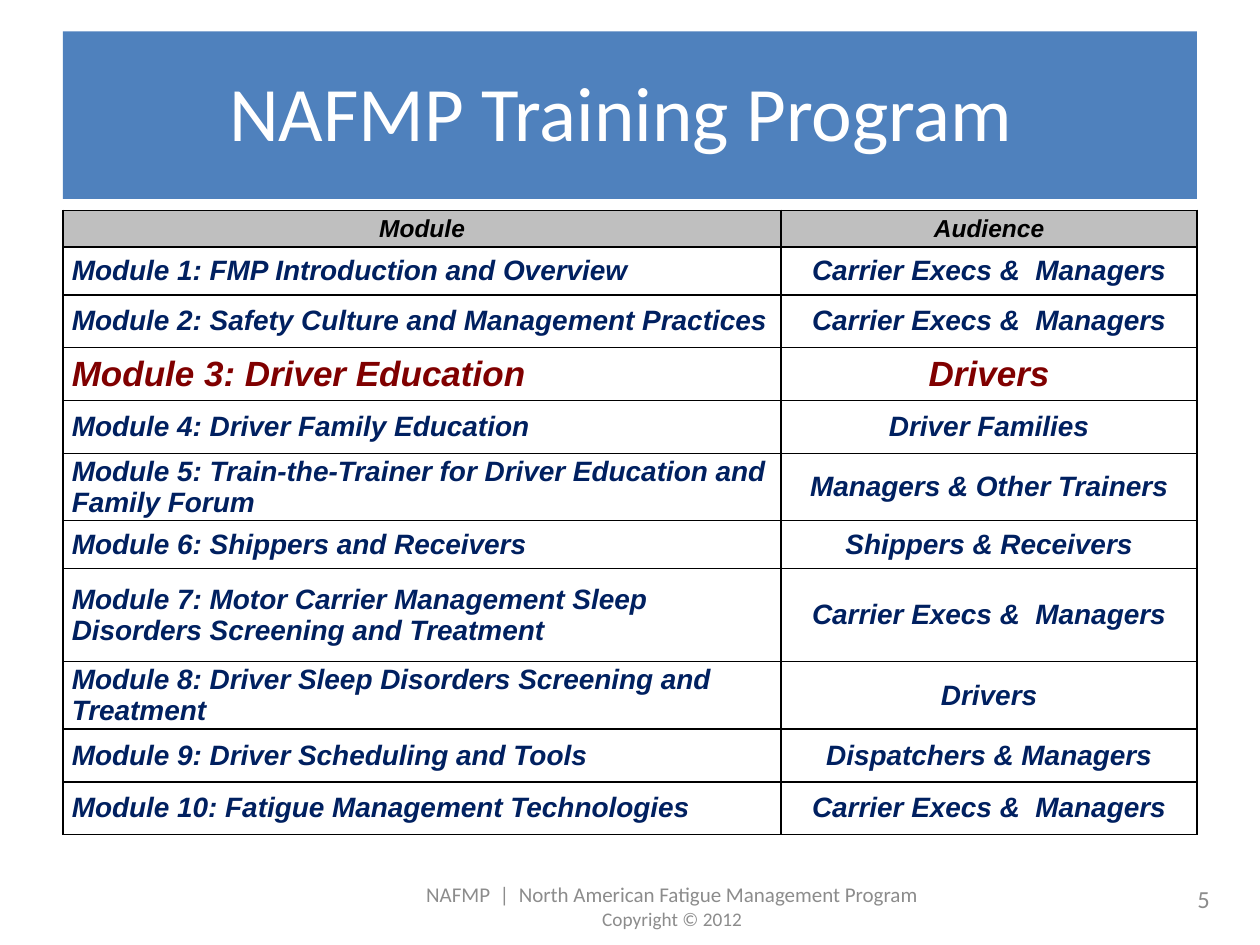
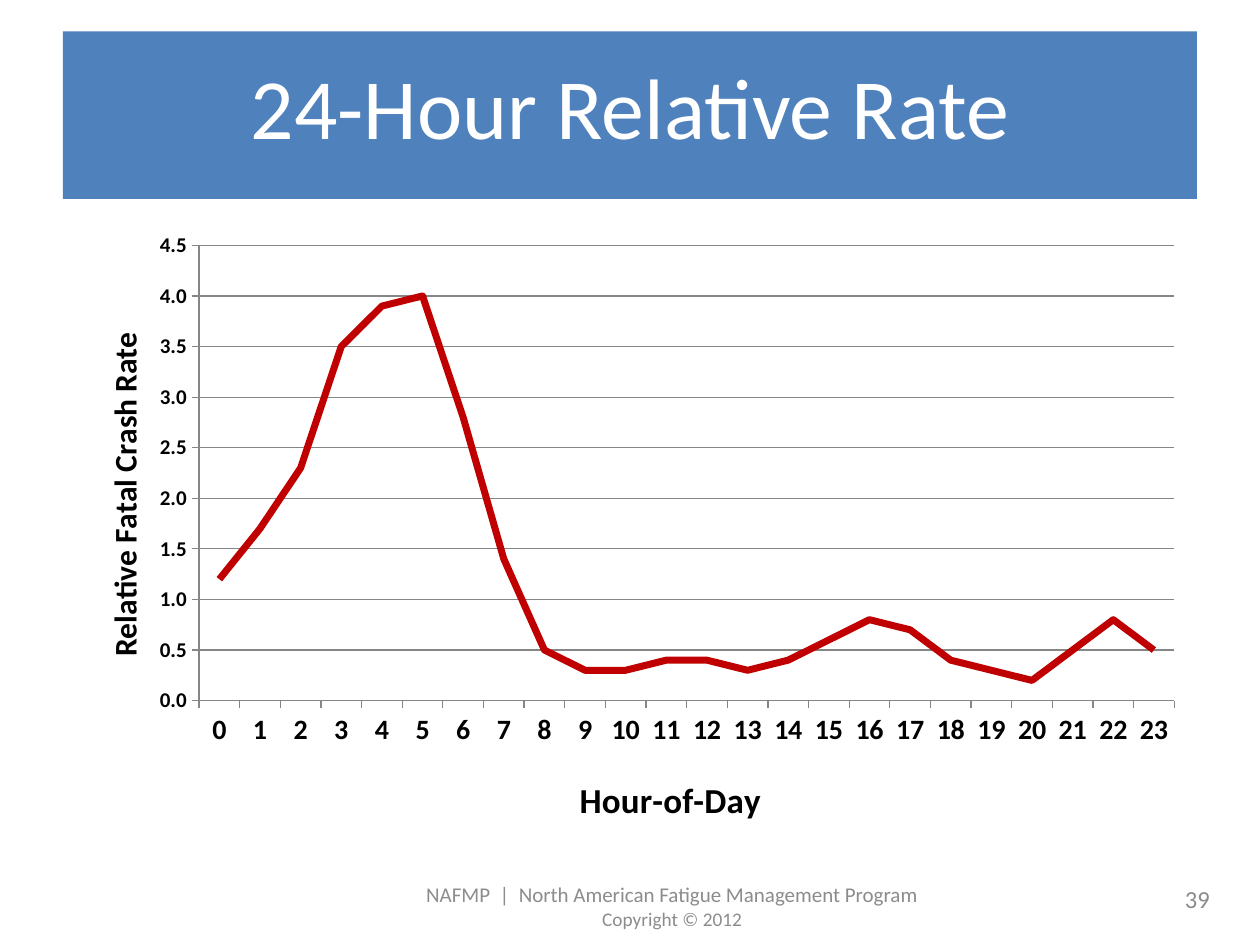
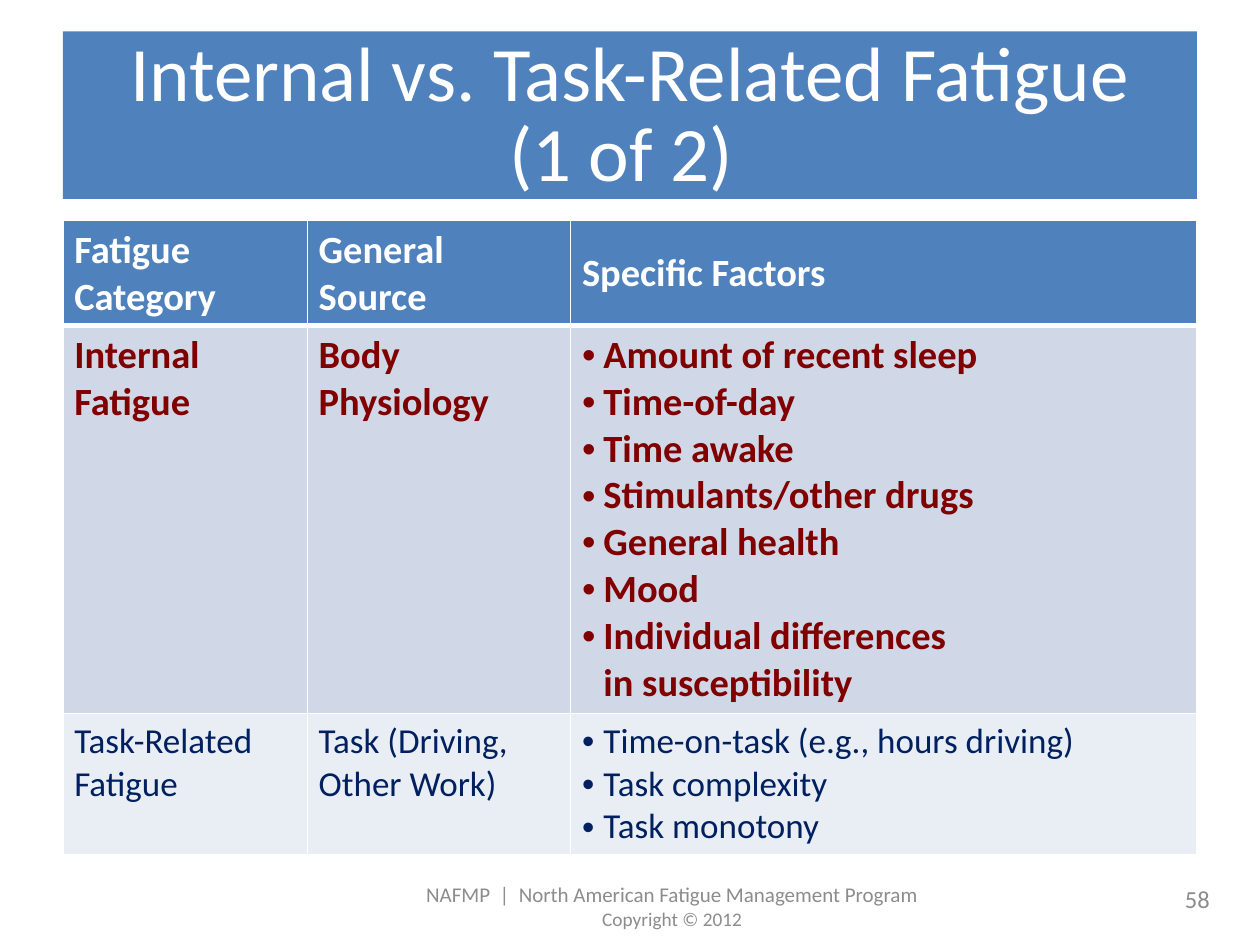
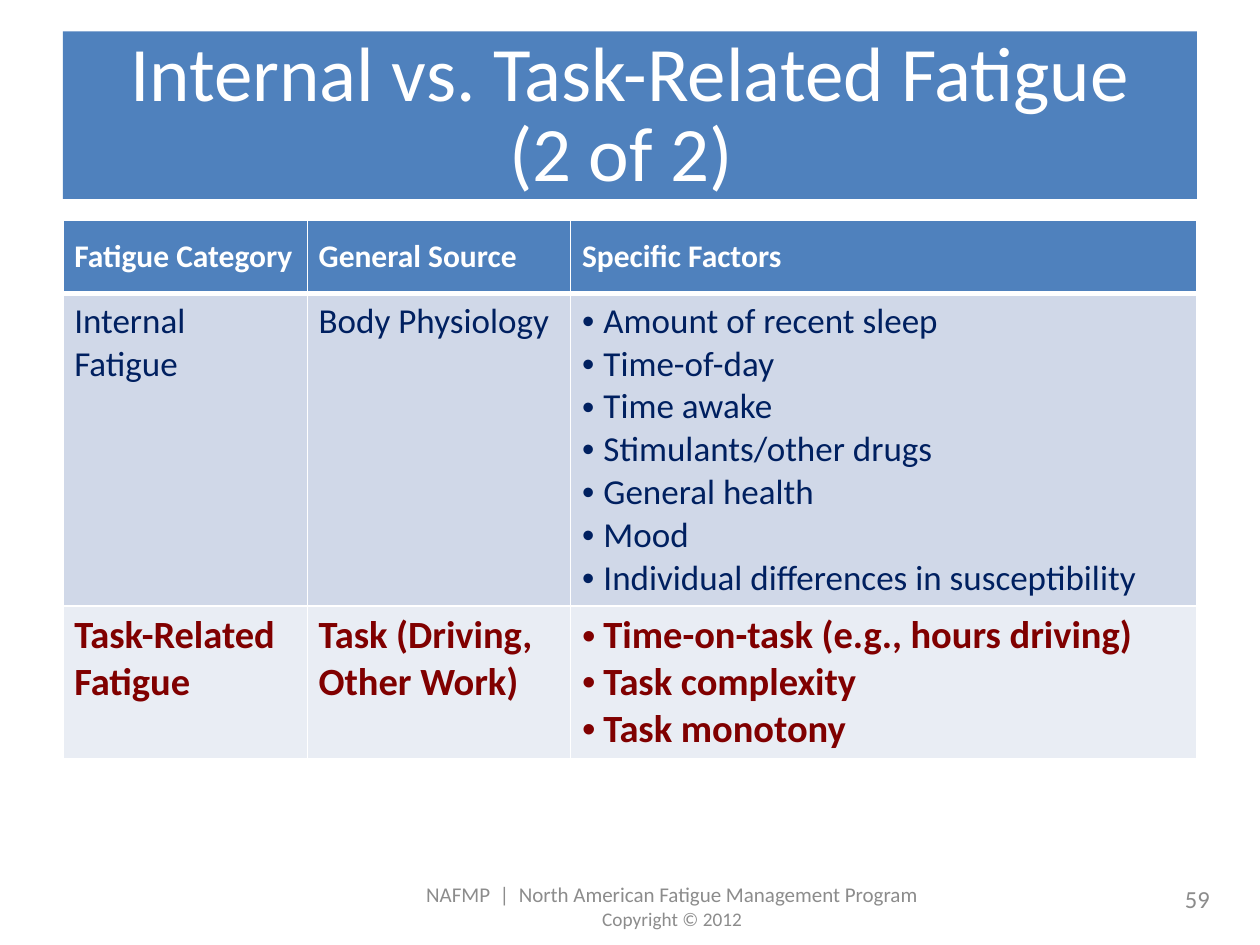
import lxml.etree
import pptx
import pptx.chart.data
import pptx.dml.color
import pptx.enum.chart
import pptx.enum.shapes
import pptx.enum.text
import pptx.oxml
import pptx.oxml.ns
import pptx.util

Inches = pptx.util.Inches
Pt = pptx.util.Pt
qn = pptx.oxml.ns.qn
ALIGN = pptx.enum.text.PP_ALIGN
ANCHOR = pptx.enum.text.MSO_ANCHOR

BLUE, WHITE, BLACK = "4F81BD", "FFFFFF", "000000"
NAVY, MAROON, RED = "002060", "800000", "C00000"
SILVER, GREY, AXIS_GREY = "BFBFBF", "8C8C8C", "868686"
BODY_FILLS = ["D0D8E8", "E9EDF4"]

LEFT, WIDTH = 0.5, 9
FOOTER = [("NAFMP  |  North American Fatigue Management Program", 12),
          ("Copyright © 2012", 11)]

MODULE_COLUMNS = [("Module", 5.7), ("Audience", 3.3)]
MODULE_HEADER_HEIGHT = 0.29
HIGHLIGHTED_MODULE = 3
MODULES = [  # topic, audience, row height
    ("FMP Introduction and Overview", "Carrier Execs &  Managers", 0.38),
    ("Safety Culture and Management Practices", "Carrier Execs &  Managers", 0.42),
    ("Driver Education", "Drivers", 0.42),
    ("Driver Family Education", "Driver Families", 0.42),
    ("Train-the-Trainer for Driver Education and Family Forum",
     "Managers & Other Trainers", 0.5),
    ("Shippers and Receivers", "Shippers & Receivers", 0.38),
    ("Motor Carrier Management Sleep Disorders Screening and Treatment",
     "Carrier Execs &  Managers", 0.74),
    ("Driver Sleep Disorders Screening and Treatment", "Drivers", 0.5),
    ("Driver Scheduling and Tools", "Dispatchers & Managers", 0.42),
    ("Fatigue Management Technologies", "Carrier Execs &  Managers", 0.42),
]

CRASH_RATES = [1.2, 1.7, 2.3, 3.5, 3.9, 4.0, 2.8, 1.4, 0.5, 0.3, 0.3, 0.4,
               0.4, 0.3, 0.4, 0.6, 0.8, 0.7, 0.4, 0.3, 0.2, 0.5, 0.8, 0.5]

FATIGUE_COLUMNS = [("Fatigue Category", 1.94), ("General Source", 2.09),
                   ("Specific Factors", 4.97)]
FATIGUE_TYPES = [  # category, source, factors
    (["Internal", "Fatigue"], ["Body Physiology"],
     ["Amount of recent sleep", "Time-of-day", "Time awake",
      "Stimulants/other drugs", "General health", "Mood",
      "Individual differences\nin susceptibility"]),
    (["Task-Related", "Fatigue"], ["Task (Driving,", "Other Work)"],
     ["Time-on-task (e.g., hours driving)", "Task complexity", "Task monotony"]),
]
FATIGUE_SLIDES = [  # page, part, highlighted row, header size, row heights
    (58, "(1 of 2) ", 0, 22, [0.83, 3.08, 1.12]),
    (59, "(2 of 2) ", 1, 18, [0.58, 2.48, 1.21]),
]


def rgb(code):
    return pptx.dml.color.RGBColor.from_string(code)


def style_font(font, size, color, bold=False, italic=False, face="Calibri"):
    font.name, font.size, font.bold, font.italic = face, Pt(size), bold, italic
    font.color.rgb = rgb(color)


def add_bullet(paragraph, hang=0.17):
    properties = paragraph._p.get_or_add_pPr()
    properties.set("marL", str(Inches(hang)))
    properties.set("indent", str(-Inches(hang)))
    lxml.etree.SubElement(properties, qn("a:buFont")).set("typeface", "Arial")
    lxml.etree.SubElement(properties, qn("a:buChar")).set("char", "•")


def write(frame, lines, size, color, align=ALIGN.LEFT, bullet=False,
          spacing=None, **look):
    """One paragraph per line; a newline inside a line is a line break."""
    for index, line in enumerate(lines):
        paragraph = frame.add_paragraph() if index else frame.paragraphs[0]
        paragraph.alignment = align
        if spacing:
            paragraph.line_spacing = Pt(spacing)
        if bullet:
            add_bullet(paragraph)
        for part_index, part in enumerate(line.split("\n")):
            if part_index:
                paragraph.add_line_break()
            run = paragraph.add_run()
            run.text = part
            style_font(run.font, size, color, **look)


def add_text_area(slide, left, top, width, height):
    frame = slide.shapes.add_textbox(*map(Inches, (left, top, width, height))).text_frame
    frame.word_wrap = True
    frame.vertical_anchor = ANCHOR.MIDDLE
    return frame


def add_framed_slide(prs, title, page, title_size=44):
    """Slide with the title band, footer and page number."""
    slide = prs.slides.add_slide(prs.slide_layouts[6])
    band = slide.shapes.add_shape(pptx.enum.shapes.MSO_SHAPE.RECTANGLE,
                                  *map(Inches, (LEFT, 0.25, WIDTH, 1.33)))
    band.shadow.inherit = False
    band.fill.solid()
    band.fill.fore_color.rgb = rgb(BLUE)
    band.line.fill.background()

    footer = add_text_area(slide, 3, 7, 4.67, 0.38)
    for index, (text, size) in enumerate(FOOTER):
        paragraph = footer.add_paragraph() if index else footer.paragraphs[0]
        paragraph.alignment = ALIGN.CENTER
        run = paragraph.add_run()
        run.text = text
        style_font(run.font, size, GREY)
    write(add_text_area(slide, 7.37, 6.93, 2.33, 0.4), [str(page)], 14, GREY, ALIGN.RIGHT)
    write(add_text_area(slide, LEFT, 0.3, WIDTH, 1.25), [title], title_size, WHITE,
          ALIGN.CENTER, spacing=45.8)
    return slide


def add_grid(slide, top, columns, heights):
    widths = [width for _, width in columns]
    table = slide.shapes.add_table(len(heights), len(widths), Inches(LEFT), Inches(top),
                                   Inches(WIDTH), Inches(sum(heights))).table
    table.horz_banding = False
    for column, width in zip(table.columns, widths):
        column.width = Inches(width)
    for row, height in zip(table.rows, heights):
        row.height = Inches(height)
    return table


def style_cell(cell, border, fill=None, margins=(0.09, 0.05), anchor=ANCHOR.TOP,
               top=1, bottom=1):
    properties = cell._tc.get_or_add_tcPr()
    for side, width in (("L", 1), ("R", 1), ("T", top), ("B", bottom)):
        line = lxml.etree.SubElement(properties, qn("a:ln" + side), w=str(Pt(width)))
        solid = lxml.etree.SubElement(line, qn("a:solidFill"))
        lxml.etree.SubElement(solid, qn("a:srgbClr"), val=border)
    if fill:
        cell.fill.solid()
        cell.fill.fore_color.rgb = rgb(fill)
    else:
        cell.fill.background()
    cell.margin_left = cell.margin_right = Inches(margins[0])
    cell.margin_top = cell.margin_bottom = Inches(margins[1])
    cell.vertical_anchor = anchor


def add_modules_slide(prs):
    slide = add_framed_slide(prs, "NAFMP Training Program ", 5)
    heights = [MODULE_HEADER_HEIGHT] + [height for _, _, height in MODULES]
    table = add_grid(slide, 1.67, MODULE_COLUMNS, heights)
    rows = [[name for name, _ in MODULE_COLUMNS]]
    rows += [(f"Module {number}: {topic}", audience)
             for number, (topic, audience, _) in enumerate(MODULES, 1)]
    for number, texts in enumerate(rows):
        size, color = 16, NAVY
        if number == 0:
            size, color = 14, BLACK
        elif number == HIGHLIGHTED_MODULE:
            size, color = 20, MAROON
        for column, text in enumerate(texts):
            cell = table.cell(number, column)
            style_cell(cell, BLACK, None if number else SILVER, (0.07, 0), ANCHOR.MIDDLE)
            align = ALIGN.LEFT if number and column == 0 else ALIGN.CENTER
            write(cell.text_frame, [text], size, color, align,
                  bold=True, italic=True, face="Arial")


def place(element, inner=False, **fractions):
    """Fix a chart part at fractions of the chart area."""
    for old in element.findall(qn("c:layout")):
        element.remove(old)
    layout = pptx.oxml.parse_xml(f"<c:layout {pptx.oxml.ns.nsdecls('c')}/>")
    manual = lxml.etree.SubElement(layout, qn("c:manualLayout"))
    settings = {"layoutTarget": "inner"} if inner else {}
    settings.update(xMode="edge", yMode="edge", **fractions)
    for tag, value in settings.items():
        lxml.etree.SubElement(manual, qn("c:" + tag)).set("val", str(value))
    element.insert(0 if element.find(qn("c:tx")) is None else 1, layout)


def style_axis(axis, title, title_size, label_size, x, y):
    axis.major_tick_mark = pptx.enum.chart.XL_TICK_MARK.OUTSIDE
    axis.minor_tick_mark = pptx.enum.chart.XL_TICK_MARK.NONE
    axis.format.line.color.rgb = rgb(AXIS_GREY)
    style_font(axis.tick_labels.font, label_size, BLACK, bold=True)
    write(axis.axis_title.text_frame, [title], title_size, BLACK, ALIGN.CENTER, bold=True)
    place(axis.axis_title._element, x=x, y=y)


def add_crash_rate_slide(prs):
    slide = add_framed_slide(prs, "24-Hour Relative Rate", 39, 49)
    data = pptx.chart.data.CategoryChartData(number_format="0.0")
    data.categories = [str(hour) for hour in range(24)]
    data.add_series("Series 1", CRASH_RATES)
    chart = slide.shapes.add_chart(pptx.enum.chart.XL_CHART_TYPE.LINE,
                                   *map(Inches, (LEFT, 1.75, WIDTH, 4.95)), data).chart
    chart.has_title = chart.has_legend = False
    style_font(chart.font, 10, BLACK)
    chart.plots[0].vary_by_categories = False

    rate_line = chart.plots[0].series[0]
    rate_line.smooth = False
    rate_line.marker.style = pptx.enum.chart.XL_MARKER_STYLE.NONE
    rate_line.format.line.color.rgb = rgb(RED)
    rate_line.format.line.width = Pt(4)

    style_axis(chart.category_axis, "Hour-of-Day", 20, 16, x=0.45, y=0.88)
    rates = chart.value_axis
    style_axis(rates, "Relative Fatal Crash Rate", 18, 12, x=0.03, y=0.17)
    rotation = rates.axis_title.text_frame._element.find(qn("a:bodyPr"))
    rotation.set("rot", "-5400000")
    rotation.set("vert", "horz")
    rates.minimum_scale, rates.maximum_scale, rates.major_unit = 0, 4.5, 0.5
    rates.tick_labels.number_format = "0.0"
    rates.tick_labels.number_format_is_linked = False
    rates.has_major_gridlines = True
    rates.major_gridlines.format.line.color.rgb = rgb(AXIS_GREY)
    plot_area = chart._chartSpace.find(".//" + qn("c:plotArea"))
    place(plot_area, inner=True, x=0.12, y=0.04, w=0.86, h=0.73)


def add_fatigue_slide(prs, page, part, highlighted, header_size, heights):
    slide = add_framed_slide(prs, "Internal vs. Task-Related Fatigue\n" + part, page)
    table = add_grid(slide, 1.75, FATIGUE_COLUMNS, heights)
    for column, (name, _) in enumerate(FATIGUE_COLUMNS):
        cell = table.cell(0, column)
        style_cell(cell, WHITE, BLUE, anchor=ANCHOR.MIDDLE, bottom=3)
        write(cell.text_frame, [name], header_size, WHITE, bold=True)
    for row, fatigue_type in enumerate(FATIGUE_TYPES):
        strong = row == highlighted
        size, color = (22, MAROON) if strong else (20, NAVY)
        for column, lines in enumerate(fatigue_type):
            if not strong:
                lines = [line.replace("\n", " ") for line in lines]
            cell = table.cell(row + 1, column)
            style_cell(cell, WHITE, BODY_FILLS[row], top=1 if row else 3)
            write(cell.text_frame, lines, size, color, bullet=column == 2, bold=strong)


def main():
    prs = pptx.Presentation()
    prs.slide_width, prs.slide_height = Inches(10), Inches(7.5)
    add_modules_slide(prs)
    add_crash_rate_slide(prs)
    for fatigue_slide in FATIGUE_SLIDES:
        add_fatigue_slide(prs, *fatigue_slide)
    prs.save("out.pptx")


if __name__ == "__main__":
    main()
